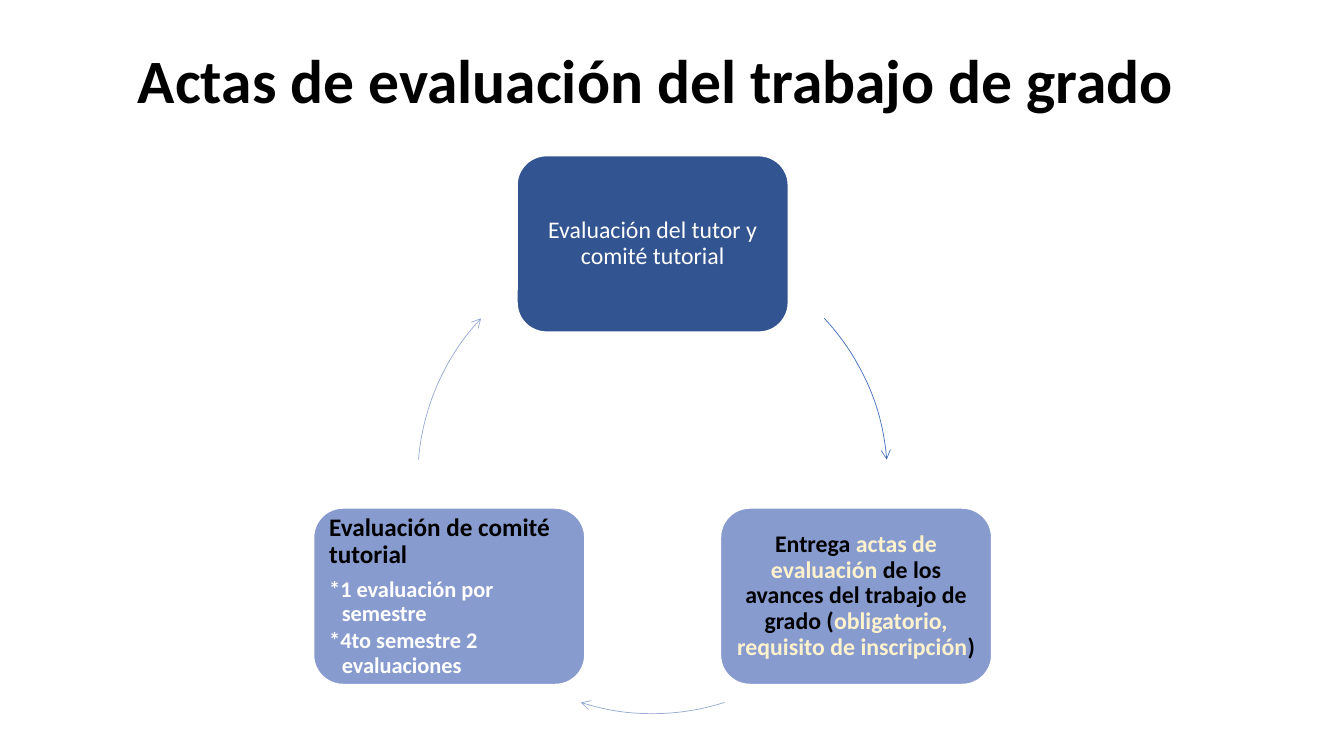
from math import cos, radians, sin

from lxml.etree import SubElement
from pptx import Presentation
from pptx.dml.color import RGBColor
from pptx.enum.shapes import MSO_SHAPE as SHAPE
from pptx.enum.text import MSO_ANCHOR as ANCHOR, PP_ALIGN as ALIGN
from pptx.oxml.ns import qn
from pptx.util import Pt

CYCLE_X, CYCLE_Y, CYCLE_RADIUS = 466.2, 342, 167.8
STEP_WIDTH, STEP_HEIGHT = 193.7, 126
BLACK, WHITE, CREAM = "000000", "FFFFFF", "FFF2CC"
DARK_BLUE, LIGHT_BLUE = "325491", "879BCE"


def color(hex_code):
    return RGBColor.from_string(hex_code)


def style_font(font, size, hex_code, bold):
    font.name = "Calibri"
    font.size = Pt(size)
    font.bold = bold
    font.color.rgb = color(hex_code)


def add_title(slide, wording):
    title = slide.shapes.title
    title.left, title.top, title.width, title.height = Pt(54.7), Pt(7.2), Pt(828), Pt(104.4)
    frame = title.text_frame
    frame.text = wording
    frame.vertical_anchor = ANCHOR.MIDDLE
    heading = frame.paragraphs[0]
    heading.alignment = ALIGN.CENTER
    heading.line_spacing = 0.9
    style_font(heading.runs[0].font, 44, BLACK, True)


def add_step(slide, angle, fill):
    center_x = CYCLE_X + CYCLE_RADIUS * cos(radians(angle))
    center_y = CYCLE_Y + CYCLE_RADIUS * sin(radians(angle))
    step = slide.shapes.add_shape(
        SHAPE.ROUNDED_RECTANGLE,
        Pt(center_x - STEP_WIDTH / 2), Pt(center_y - STEP_HEIGHT / 2),
        Pt(STEP_WIDTH), Pt(STEP_HEIGHT))
    step.shadow.inherit = False
    step.fill.solid()
    step.fill.fore_color.rgb = color(fill)
    step.line.color.rgb = color(WHITE)
    step.line.width = Pt(1)
    frame = step.text_frame
    frame.word_wrap = True
    frame.vertical_anchor = ANCHOR.MIDDLE
    frame.margin_left = frame.margin_right = Pt(5)
    frame.margin_top = frame.margin_bottom = Pt(5)
    return frame


def write_paragraph(paragraph, pieces, size, bold=True, align=ALIGN.CENTER, after=0, hanging=0):
    if hanging:
        properties = paragraph._p.get_or_add_pPr()
        properties.set("marL", str(Pt(hanging)))
        properties.set("indent", str(-Pt(hanging)))
    paragraph.alignment = align
    paragraph.line_spacing = 0.9
    paragraph.space_after = Pt(after)
    for wording, hex_code in pieces:
        run = paragraph.add_run()
        run.text = wording
        style_font(run.font, size, hex_code, bold)


def add_cycle_arrow(slide, start, end, hex_code):
    arrow = slide.shapes.add_shape(
        SHAPE.ARC, Pt(CYCLE_X - CYCLE_RADIUS), Pt(CYCLE_Y - CYCLE_RADIUS),
        Pt(2 * CYCLE_RADIUS), Pt(2 * CYCLE_RADIUS))
    arrow.adjustments[0] = start * 0.6
    arrow.adjustments[1] = end * 0.6
    arrow.shadow.inherit = False
    arrow.fill.background()
    arrow.line.color.rgb = color(hex_code)
    arrow.line.width = Pt(0.5)
    SubElement(arrow.line._get_or_add_ln(), qn("a:tailEnd"), type="arrow")


def main():
    presentation = Presentation()
    presentation.slide_width, presentation.slide_height = Pt(960), Pt(540)
    slide = presentation.slides.add_slide(presentation.slide_layouts[5])
    add_title(slide, "Actas de evaluación del trabajo de grado")

    tutor = add_step(slide, -90, DARK_BLUE)
    write_paragraph(tutor.paragraphs[0],
                    [("Evaluación del tutor y comité tutorial", WHITE)], 17, bold=False)
    add_cycle_arrow(slide, 316.9, 355.3, "416DBB")

    records = add_step(slide, 30, LIGHT_BLUE)
    write_paragraph(records.paragraphs[0], [
        ("Entrega ", BLACK),
        ("actas de evaluación ", CREAM),
        ("de los avances del trabajo de grado (", BLACK),
        ("obligatorio, requisito de inscripción", CREAM),
        (")", BLACK),
    ], 17)
    add_cycle_arrow(slide, 72.2, 107.8, "97A9D5")

    committee = add_step(slide, 150, LIGHT_BLUE)
    write_paragraph(committee.paragraphs[0], [("Evaluación de comité tutorial", BLACK)],
                    18, align=ALIGN.LEFT, after=6.3)
    for evaluation in ("*1 evaluación por semestre", "*4to semestre 2 evaluaciones"):
        write_paragraph(committee.add_paragraph(), [(evaluation, WHITE)],
                        16, align=ALIGN.LEFT, after=2.4, hanging=9)
    add_cycle_arrow(slide, 184.7, 223.1, "97A9D5")

    presentation.save("out.pptx")


if __name__ == "__main__":
    main()
